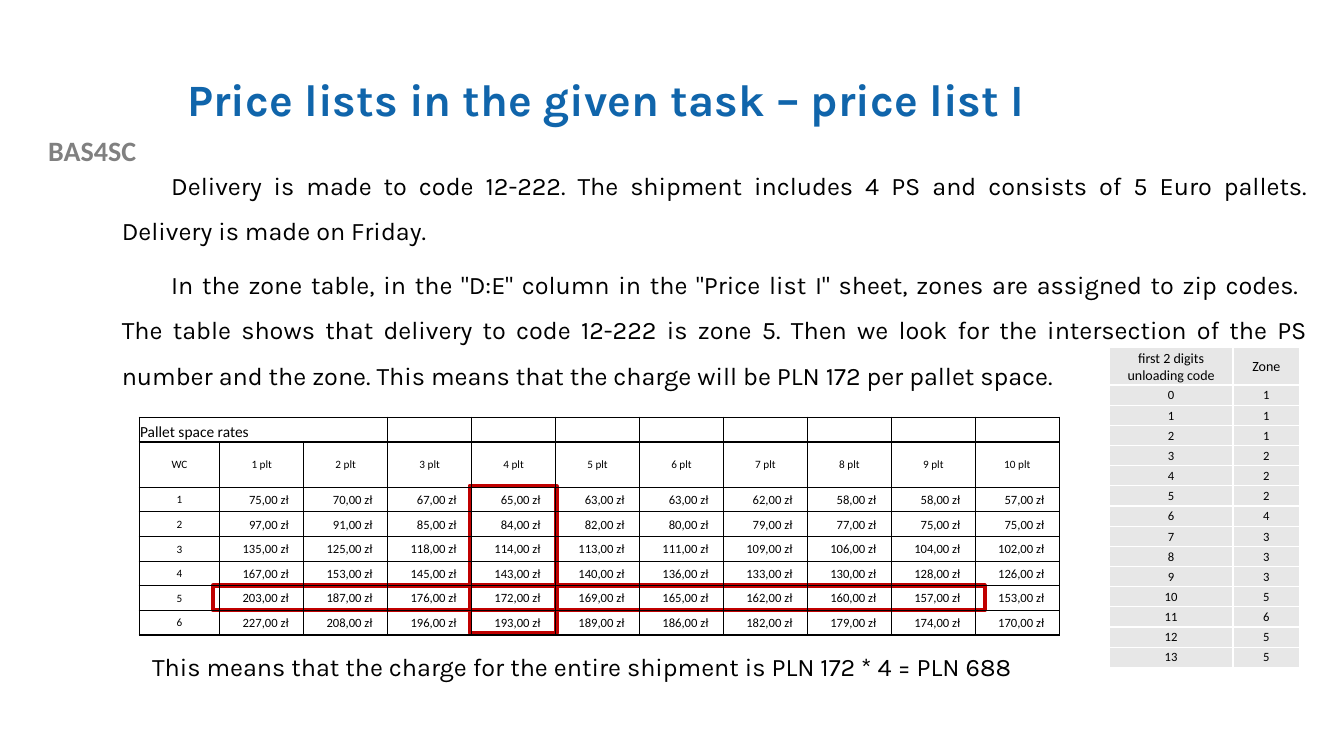
from lxml.etree import SubElement
from pptx import Presentation
from pptx.dml.color import RGBColor
from pptx.enum.shapes import MSO_SHAPE
from pptx.enum.text import MSO_ANCHOR as ANCHOR, PP_ALIGN as ALIGN
from pptx.oxml.ns import qn
from pptx.util import Inches, Pt

PROSE = dict(size=18, font="Karla", align=ALIGN.JUSTIFY, spacing=1.5, after=6, indent=0.49)
DELIVERY = ("Delivery is made to code 12-222. The shipment includes 4 PS and consists of "
            "5 Euro pallets. Delivery is made on Friday.")
ZONE_RULE = ('In the zone table, in the "D:E" column in the "Price list I" sheet, zones are '
             "assigned to zip codes. \nThe table shows that delivery to code 12-222 is zone 5. "
             "Then we look for the intersection of the PS number and the zone. This means that "
             "the charge will be PLN 172 per pallet space.")
TOTAL = "This means that the charge for the entire shipment is PLN 172 * 4 = PLN 688"
RATES = [
    [75, 70, 67, 65, 63, 63, 62, 58, 58, 57],
    [97, 91, 85, 84, 82, 80, 79, 77, 75, 75],
    [135, 125, 118, 114, 113, 111, 109, 106, 104, 102],
    [167, 153, 145, 143, 140, 136, 133, 130, 128, 126],
    [203, 187, 176, 172, 169, 165, 162, 160, 157, 153],
    [227, 208, 196, 193, 189, 186, 182, 179, 174, 170],
]
ZONES = [1, 1, 1, 2, 2, 2, 4, 3, 3, 3, 5, 6, 5, 5]


def rgb(color):
    """Turn a hex string into a colour."""
    return RGBColor.from_string(color)


def write(p, text, size=9, font="Calibri", color="000000", bold=False,
          align=ALIGN.LEFT, spacing=1.0, after=0, indent=0):
    """Fill a paragraph with formatted text; a newline breaks the line."""
    p.alignment = align
    p.line_spacing = spacing
    p.space_after = Pt(after)
    if indent:
        p._p.get_or_add_pPr().set("indent", str(Inches(indent)))
    for i, line in enumerate(text.split("\n")):
        if i:
            p.add_line_break()
        r = p.add_run()
        r.text = line
        r.font.size = Pt(size)
        r.font.name = font
        r.font.bold = bold
        r.font.color.rgb = rgb(color)


def add_text(s, box, texts, anchor=ANCHOR.TOP, **fmt):
    """Add a wrapping text box with one paragraph per text."""
    tf = s.shapes.add_textbox(*map(Inches, box)).text_frame
    tf.word_wrap = True
    tf.vertical_anchor = anchor
    for i, text in enumerate(texts):
        write(tf.add_paragraph() if i else tf.paragraphs[0], text, **fmt)


def add_frame(s, box):
    """Add a hollow red highlight frame."""
    sp = s.shapes.add_shape(MSO_SHAPE.RECTANGLE, *map(Inches, box))
    sp.shadow.inherit = False
    sp.fill.background()
    sp.line.color.rgb = rgb("C00000")
    sp.line.width = Pt(3)


def set_borders(cell, color):
    """Draw a one-point line on every side of a cell."""
    tc_pr = cell._tc.get_or_add_tcPr()
    for side in ("lnL", "lnR", "lnT", "lnB"):
        ln = SubElement(tc_pr, qn(f"a:{side}"), w=str(Pt(1)))
        fill = SubElement(ln, qn("a:solidFill"))
        SubElement(fill, qn("a:srgbClr"), val=color)


def add_grid(s, left, top, widths, heights, border, fill=None):
    """Add a plain table with uniform borders and cell fill."""
    frame = s.shapes.add_table(len(heights), len(widths), Inches(left), Inches(top),
                               Inches(sum(widths)), Inches(sum(heights)))
    table = frame.table
    table.first_row = table.horz_banding = False
    for column, width in zip(table.columns, widths):
        column.width = Inches(width)
    for row, height in zip(table.rows, heights):
        row.height = Inches(height)
    for cell in table.iter_cells():
        set_borders(cell, border)
        if fill:
            cell.fill.solid()
            cell.fill.fore_color.rgb = rgb(fill)
        else:
            cell.fill.background()
        cell.margin_left = cell.margin_right = cell.margin_top = Inches(0.01)
        cell.margin_bottom = 0
        cell.vertical_anchor = ANCHOR.MIDDLE
        cell.text_frame.paragraphs[0]._p.get_or_add_endParaRPr().set("sz", "900")
    return table


def fill_cell(cell, value, **fmt):
    """Write one centred value into a cell."""
    write(cell.text_frame.paragraphs[0], str(value), **{"align": ALIGN.CENTER, **fmt})


def add_rates(s):
    """Add the table of pallet space rates by zone."""
    row = (2.16 - 0.45) / 7
    table = add_grid(s, 1.38, 4.14, [0.8] + [0.833] * 10, [row, 0.45] + [row] * 6, "000000")
    heading = table.cell(0, 0)
    heading.merge(table.cell(0, 2))
    heading.vertical_anchor = ANCHOR.BOTTOM
    fill_cell(heading, "Pallet space rates", size=11, align=ALIGN.LEFT)
    for c, label in enumerate(["WC"] + [f"{n} plt" for n in range(1, 11)]):
        fill_cell(table.cell(1, c), label, size=8)
    for zone, prices in enumerate(RATES, 1):
        fill_cell(table.cell(zone + 1, 0), zone, size=8)
        for c, price in enumerate(prices, 1):
            cell = table.cell(zone + 1, c)
            cell.margin_right = Inches(0.15)
            fill_cell(cell, f"{price},00 zł", align=ALIGN.RIGHT)


def add_zones(s):
    """Add the table that maps unloading codes to zones."""
    table = add_grid(s, 11, 3.45, [1.23, 0.66], [0.37] + [0.2] * 14, "FFFFFF", "E7E7E7")
    for c, label in enumerate(["first 2 digits unloading code", "Zone"]):
        fill_cell(table.cell(0, c), label, size=10)
    for code, zone in enumerate(ZONES):
        fill_cell(table.cell(code + 1, 0), code)
        fill_cell(table.cell(code + 1, 1), zone)


def main():
    """Build the price list slide."""
    prs = Presentation()
    prs.slide_width, prs.slide_height = Inches(13.33), Inches(7.5)
    s = prs.slides.add_slide(prs.slide_layouts[6])
    add_text(s, (0, 1.28, 1.83, 0.44), ["BAS4SC"], size=20, color="808080", bold=True,
             align=ALIGN.CENTER)
    add_text(s, (1.76, 0.4, 10.66, 1.22), ["Price lists in the given task – price list I"],
             anchor=ANCHOR.MIDDLE, size=32, font="Karla", color="1065AB", bold=True, spacing=0.9)
    add_text(s, (1.11, 1.49, 11.96, 2.4), [DELIVERY, ZONE_RULE], **PROSE)
    add_frame(s, (2.11, 5.81, 7.66, 0.24))
    add_frame(s, (4.66, 4.82, 0.86, 1.46))
    add_text(s, (0.92, 6.26, 9.28, 0.49), [TOTAL], **PROSE)
    add_rates(s)
    add_zones(s)
    prs.save("out.pptx")


if __name__ == "__main__":
    main()
